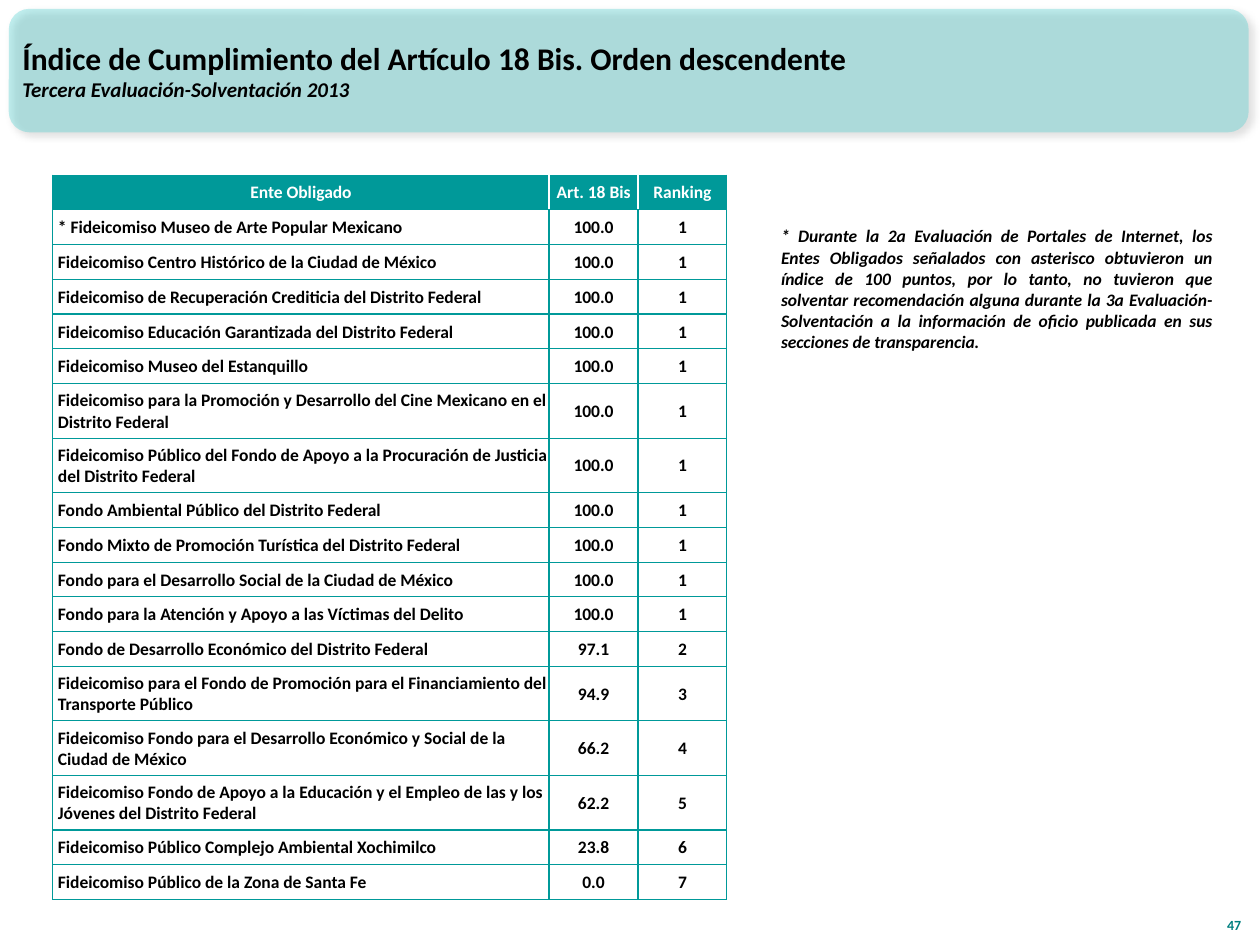
import dataclasses

import lxml.etree
import pptx
import pptx.dml.color
import pptx.enum.shapes
import pptx.enum.text
import pptx.oxml
import pptx.oxml.ns
import pptx.util

ALIGN = pptx.enum.text.PP_ALIGN
ANCHOR = pptx.enum.text.MSO_ANCHOR
UNIT = pptx.util.Inches(0.1)


@dataclasses.dataclass(frozen=True)
class Theme:
    """Colours, font and type sizes of the page."""
    font: str = "Calibri"
    ink: str = "000000"
    paper: str = "FFFFFF"
    teal: str = "009999"
    banner: str = "33CCCC"
    number: str = "008080"
    title_size: int = 18
    subtitle_size: int = 12
    body_size: int = 10
    number_size: int = 8
    border: float = 0.75


THEME = Theme()
HEADINGS = ("Ente Obligado", "Art. 18 Bis", "Ranking")
SCORES = (
    ("* Fideicomiso Museo de Arte Popular Mexicano", "100.0", "1"),
    ("Fideicomiso Centro Histórico de la Ciudad de México", "100.0", "1"),
    ("Fideicomiso de Recuperación Crediticia del Distrito Federal", "100.0", "1"),
    ("Fideicomiso Educación Garantizada del Distrito Federal", "100.0", "1"),
    ("Fideicomiso Museo del Estanquillo", "100.0", "1"),
    ("Fideicomiso para la Promoción y Desarrollo del Cine Mexicano en el Distrito Federal", "100.0", "1"),
    ("Fideicomiso Público del Fondo de Apoyo a la Procuración de Justicia del Distrito Federal", "100.0", "1"),
    ("Fondo Ambiental Público del Distrito Federal", "100.0", "1"),
    ("Fondo Mixto de Promoción Turística del Distrito Federal", "100.0", "1"),
    ("Fondo para el Desarrollo Social de la Ciudad de México", "100.0", "1"),
    ("Fondo para la Atención y Apoyo a las Víctimas del Delito", "100.0", "1"),
    ("Fondo de Desarrollo Económico del Distrito Federal", "97.1", "2"),
    ("Fideicomiso para el Fondo de Promoción para el Financiamiento del Transporte Público", "94.9", "3"),
    ("Fideicomiso Fondo para el Desarrollo Económico y Social de la Ciudad de México", "66.2", "4"),
    ("Fideicomiso Fondo de Apoyo a la Educación y el Empleo de las y los Jóvenes del Distrito Federal", "62.2", "5"),
    ("Fideicomiso Público Complejo Ambiental Xochimilco", "23.8", "6"),
    ("Fideicomiso Público de la Zona de Santa Fe", "0.0", "7"),
)
NOTE = (
    "* Durante la 2a Evaluación de Portales de Internet, los Entes Obligados señalados con "
    "asterisco obtuvieron un índice de 100 puntos, por lo tanto, no tuvieron que solventar "
    "recomendación alguna durante la 3a Evaluación-Solventación a la información de oficio "
    "publicada en sus secciones de transparencia."
)


def grid(*cells):
    """Turn columns and rows of the 100 by 75 grid into lengths."""
    return [round(cell * UNIT) for cell in cells]


def colour(value):
    """Return a colour object for a hex value."""
    return pptx.dml.color.RGBColor.from_string(value)


def add_run(para, words, size, ink=THEME.ink, italic=False):
    """Add one bold run to a paragraph."""
    span = para.add_run()
    span.text = words
    span.font.name = THEME.font
    span.font.size = pptx.util.Pt(size)
    span.font.bold = True
    span.font.italic = italic
    span.font.color.rgb = colour(ink)


def add_text(page, box, anchor, align):
    """Place a wrapping text box and return its frame."""
    frame = page.shapes.add_textbox(*box).text_frame
    frame.word_wrap = True
    frame.vertical_anchor = anchor
    frame.paragraphs[0].alignment = align
    return frame


def add_banner(page, box):
    """Draw the translucent rounded banner with its soft shadow."""
    banner = page.shapes.add_shape(pptx.enum.shapes.MSO_SHAPE.ROUNDED_RECTANGLE, *box)
    banner.shadow.inherit = False
    banner.line.fill.background()
    banner.fill.solid()
    banner.fill.fore_color.rgb = colour(THEME.banner)
    properties = banner.fill._xPr
    tint = properties.find(".//" + pptx.oxml.ns.qn("a:srgbClr"))
    lxml.etree.SubElement(tint, pptx.oxml.ns.qn("a:alpha"), val="30000")
    effects = properties.find(pptx.oxml.ns.qn("a:effectLst"))
    effects.append(pptx.oxml.parse_xml(
        f'<a:outerShdw {pptx.oxml.ns.nsdecls("a")} blurRad="{pptx.util.Pt(4)}" '
        f'dist="{pptx.util.Pt(3)}" dir="2700000" algn="tl" rotWithShape="0">'
        f'<a:srgbClr val="{THEME.ink}"><a:alpha val="40000"/></a:srgbClr></a:outerShdw>'))


def add_heading(page, box):
    """Write the title and subtitle."""
    frame = add_text(page, box, ANCHOR.MIDDLE, ALIGN.LEFT)
    add_run(frame.paragraphs[0], "Índice de Cumplimiento del Artículo 18 Bis. Orden descendente",
            THEME.title_size)
    add_run(frame.add_paragraph(), "Tercera Evaluación-Solventación 2013",
            THEME.subtitle_size, italic=True)


def set_borders(cell, left, right):
    """Give a cell thin borders with chosen side colours."""
    properties = cell._tc.get_or_add_tcPr()
    for side, value in zip("LRTB", (left, right, THEME.teal, THEME.teal)):
        properties.append(pptx.oxml.parse_xml(
            f'<a:ln{side} {pptx.oxml.ns.nsdecls("a")} w="{pptx.util.Pt(THEME.border)}">'
            f'<a:solidFill><a:srgbClr val="{value}"/></a:solidFill></a:ln{side}>'))


def fill_cell(cell, words, column, header):
    """Style one table cell and write its text."""
    last = len(HEADINGS) - 1
    left = THEME.paper if header and column > 0 else THEME.teal
    right = THEME.paper if header and column < last else THEME.teal
    set_borders(cell, left, right)
    cell.fill.solid()
    cell.fill.fore_color.rgb = colour(THEME.teal if header else THEME.paper)
    name = column == 0 and not header
    edge = 0 if header else 0.1
    cell.margin_left, cell.margin_right, cell.margin_top, cell.margin_bottom = grid(
        0.4 if name else edge, edge, edge, 0)
    cell.vertical_anchor = ANCHOR.MIDDLE
    para = cell.text_frame.paragraphs[0]
    para.alignment = ALIGN.LEFT if name else ALIGN.CENTER
    add_run(para, words, THEME.body_size, THEME.paper if header else THEME.ink)


def add_ranking(page, box):
    """Build the ranking table, with taller rows for two-line names."""
    records = (HEADINGS, *SCORES)
    table = page.shapes.add_table(len(records), len(HEADINGS), *box).table
    for column, share in zip(table.columns, (0.736, 0.132, 0.132)):
        column.width = round(box[2] * share)
    weights = [11 if len(record[0]) > 65 else 7 for record in records]
    for index, (row, record, weight) in enumerate(zip(table.rows, records, weights)):
        row.height = round(box[3] * weight / sum(weights))
        for column, words in enumerate(record):
            fill_cell(row.cells[column], words, column, index == 0)


def add_note(page, box):
    """Write the justified note on the asterisk."""
    frame = add_text(page, box, ANCHOR.MIDDLE, ALIGN.JUSTIFY)
    add_run(frame.paragraphs[0], NOTE, THEME.body_size, italic=True)


def add_number(page, box):
    """Write the page number."""
    frame = add_text(page, box, ANCHOR.BOTTOM, ALIGN.RIGHT)
    add_run(frame.paragraphs[0], "47", THEME.number_size, THEME.number)


def main():
    """Build the deck and save it."""
    deck = pptx.Presentation()
    deck.slide_width, deck.slide_height = grid(100, 75)
    page = deck.slides.add_slide(deck.slide_layouts[6])
    add_banner(page, grid(0.7, 0.7, 98.4, 9.8))
    add_number(page, grid(95.5, 70.6, 4, 4))
    add_heading(page, grid(0.8, 0.9, 91.7, 9.4))
    add_ranking(page, grid(4.2, 13.9, 53.5, 57.5))
    add_note(page, grid(61, 17, 36.2, 11.8))
    deck.save("out.pptx")


if __name__ == "__main__":
    main()
